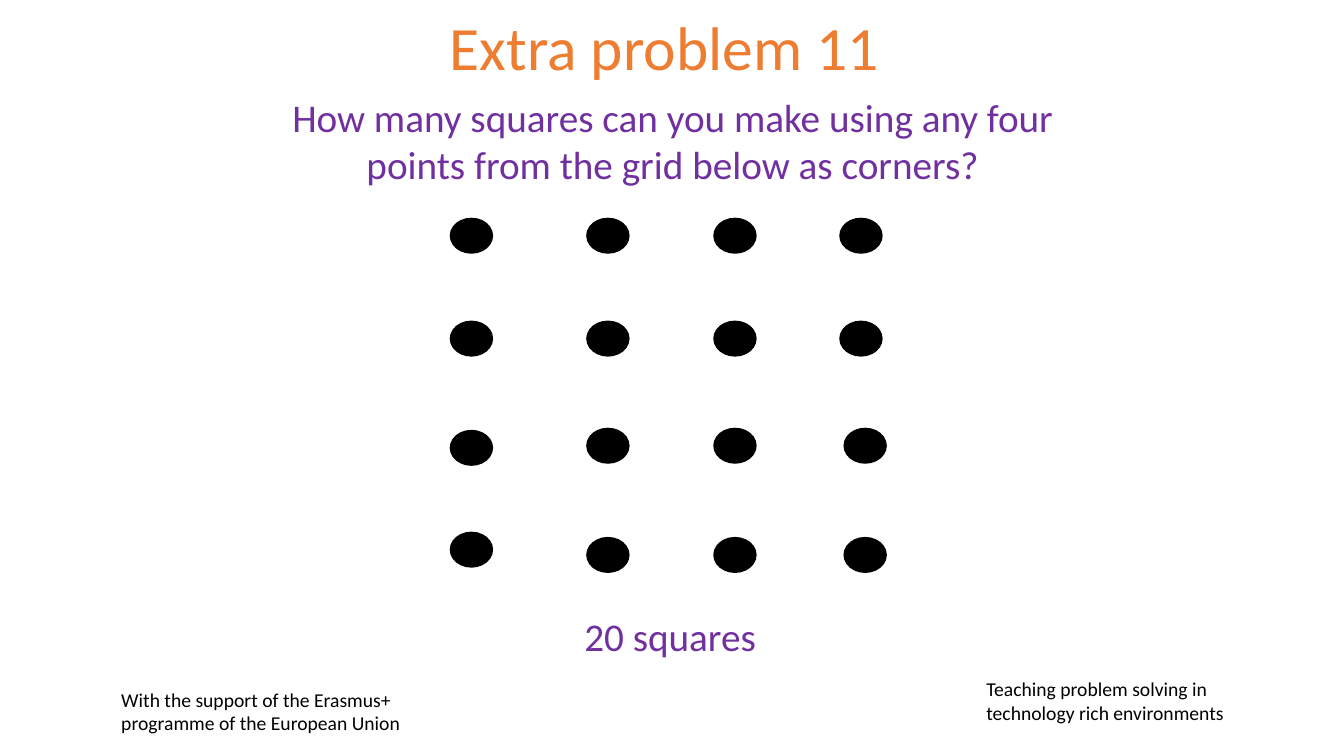
from pptx import Presentation
from pptx.dml.color import RGBColor
from pptx.enum.shapes import MSO_SHAPE
from pptx.enum.text import MSO_ANCHOR, MSO_AUTO_SIZE, PP_ALIGN
from pptx.util import Pt

EMU_PER_PX = 9525
FONT = "Calibri"
COLOURS = {"title": "ED7D31", "question": "7030A0", "ink": "000000"}

# Dot grid, relative to its box
DOT_SIZE = (40, 33)
COLUMN_LEFTS = (0, 130, 251, 371)
ROW_TOPS = (0, 98, 200, 304)
DOT_NUDGES = {(2, 0): (0, 2), (3, 0): (0, -5), (2, 3): (4, 0), (3, 3): (4, 0)}


def px(length):
    return int(length * EMU_PER_PX)


def colour(name):
    return RGBColor.from_string(COLOURS[name])


def format_paragraph(para, size, colour_name, align):
    para.alignment = align
    para.font.name = FONT
    para.font.size = Pt(size)
    para.font.color.rgb = colour(colour_name)


def add_title(page, box, text):
    title = page.shapes.title
    title.left, title.top, title.width, title.height = map(px, box)
    frame = title.text_frame
    frame.text = text
    frame.auto_size = MSO_AUTO_SIZE.NONE
    frame.vertical_anchor = MSO_ANCHOR.MIDDLE
    frame.margin_right = px(24)
    para = frame.paragraphs[0]
    format_paragraph(para, 44, "title", PP_ALIGN.CENTER)
    para.line_spacing = 0.9


def add_text(page, box, text, size, colour_name, align=PP_ALIGN.LEFT, wrap=True):
    frame = page.shapes.add_textbox(*map(px, box)).text_frame
    frame.text = text
    frame.word_wrap = wrap
    frame.auto_size = MSO_AUTO_SIZE.SHAPE_TO_FIT_TEXT
    format_paragraph(frame.paragraphs[0], size, colour_name, align)


def add_dot_grid(page, left, top):
    for row, row_top in enumerate(ROW_TOPS):
        for column, column_left in enumerate(COLUMN_LEFTS):
            shift_x, shift_y = DOT_NUDGES.get((row, column), (0, 0))
            dot_box = (left + column_left + shift_x, top + row_top + shift_y, *DOT_SIZE)
            dot = page.shapes.add_shape(MSO_SHAPE.OVAL, *map(px, dot_box))
            dot.shadow.inherit = False
            dot.fill.solid()
            dot.fill.fore_color.rgb = colour("ink")
            dot.line.color.rgb = colour("ink")
            dot.line.width = Pt(1)


def add_footer(page):
    add_text(page, (930, 640, 248, 55),
             "Teaching problem solving in technology rich environments", 14, "ink")
    add_text(page, (106, 650, 286, 55),
             "With the support of the Erasmus+ programme of the European Union", 14, "ink")


def main():
    deck = Presentation()
    deck.slide_width, deck.slide_height = px(1280), px(720)
    page = deck.slides.add_slide(deck.slide_layouts[5])

    # Heading and question
    add_title(page, (276, 7, 728, 82), "Extra problem 11")
    add_text(page, (245, 84, 791, 100),
             "How many squares can you make using any four points from the grid below as corners?",
             28, "question", PP_ALIGN.CENTER)

    # Grid and answer
    add_dot_grid(page, 429, 208)
    add_text(page, (547, 578, 185, 55), "20 squares", 28, "question", wrap=False)

    add_footer(page)
    deck.save("out.pptx")


if __name__ == "__main__":
    main()
